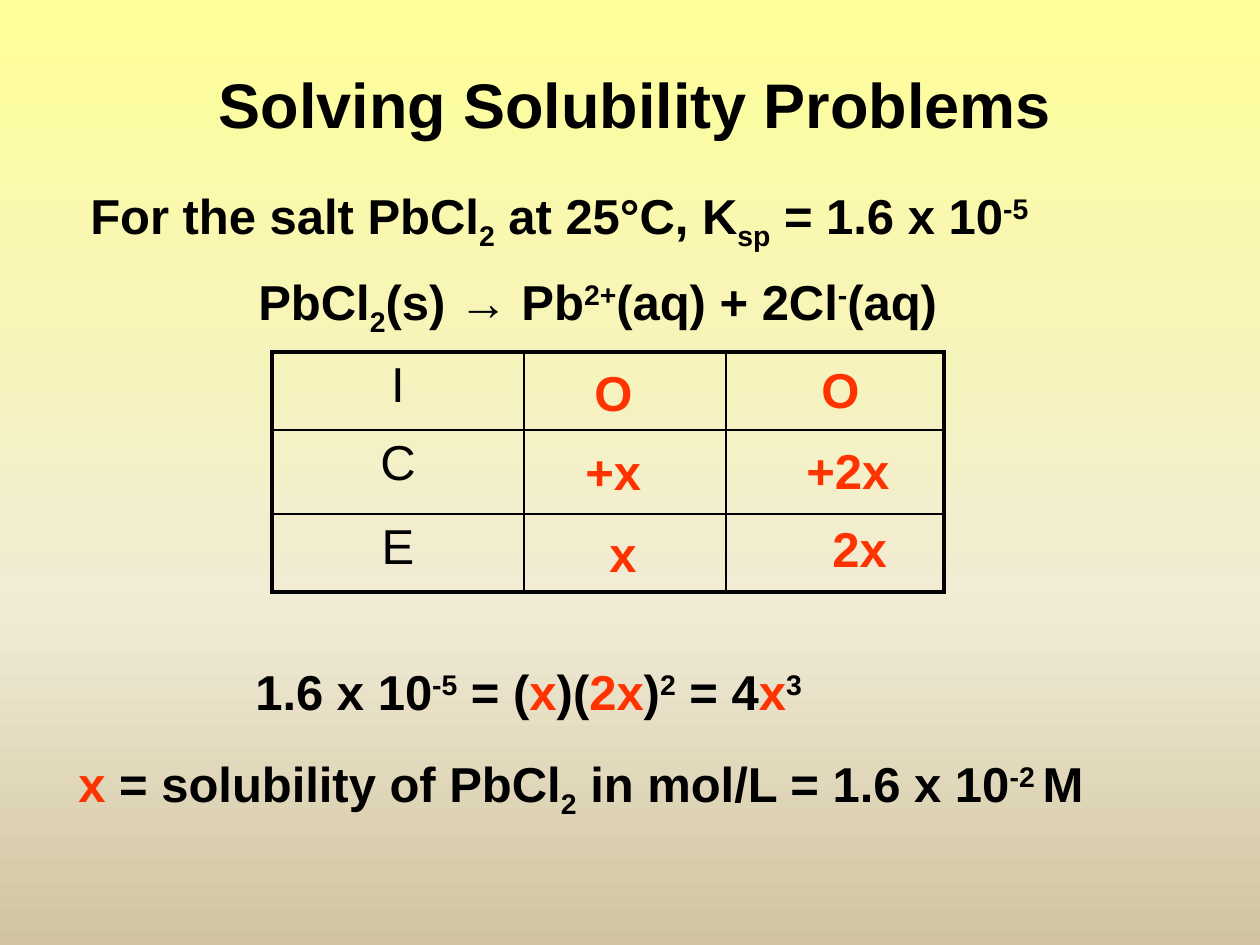
import copy

import lxml.etree
import pptx
import pptx.dml.color
import pptx.enum.text
import pptx.oxml.ns
import pptx.util

PX = 914400 / 126
BLACK, RED = "000000", "FF3300"
SUB, SUP = -25000, 30000
CENTER = pptx.enum.text.PP_ALIGN.CENTER


def rgb(value):
    return pptx.dml.color.RGBColor.from_string(value)


def write(tf, runs, size=28, bold=True, align=None):
    p = tf.paragraphs[0]
    p.alignment = align
    for text, color, base in runs:
        r = p.add_run()
        r.text = text
        font = {"name": "Arial", "size": pptx.util.Pt(size), "bold": bold}
        for key, value in font.items():
            setattr(r.font, key, value)
        r.font.color.rgb = rgb(color)
        if base:
            r.font._element.set("baseline", str(base))


prs = pptx.Presentation()
prs.slide_width, prs.slide_height = pptx.util.Inches(10), pptx.util.Inches(7.5)
s = prs.slides.add_slide(prs.slide_layouts[6])

fill = s.background.fill
fill.gradient()
fill.gradient_angle = 270
gs_list = s.element.xpath(".//a:gsLst")[0]
gs_list.append(copy.deepcopy(gs_list[-1]))
stops = [(0, "FFFF99"), (0.65, "F0EBD5"), (1, "D1C39F")]
for stop, (position, color) in zip(fill.gradient_stops, stops):
    stop.position = position
    stop.color.rgb = rgb(color)

sp = s.shapes.add_textbox(*[round(v * PX) for v in (63, 38, 1145, 130)])
tf = sp.text_frame
tf.word_wrap = True
tf.vertical_anchor = pptx.enum.text.MSO_ANCHOR.MIDDLE
write(tf, [("Solving Solubility Problems", BLACK, 0)], 36, True, CENTER)

widths, heights = [252, 202, 218], [78, 84, 78]
box = (272, 352, sum(widths), sum(heights))
table = s.shapes.add_table(3, 3, *[round(v * PX) for v in box]).table
table.first_row = table.horz_banding = False
for column, width in zip(table.columns, widths):
    column.width = round(width * PX)
for row, height in zip(table.rows, heights):
    row.height = round(height * PX)
for i, label in enumerate("ICE"):
    write(table.cell(i, 0).text_frame, [(label, BLACK, 0)], 28, False, CENTER)
    for j in range(3):
        cell = table.cell(i, j)
        tc_pr = cell._tc.get_or_add_tcPr()
        outer = {"lnL": j == 0, "lnR": j == 2, "lnT": i == 0, "lnB": i == 2}
        for side, is_outer in outer.items():
            ln = lxml.etree.SubElement(tc_pr, pptx.oxml.ns.qn("a:" + side))
            ln.set("w", str(pptx.util.Pt(2.25 if is_outer else 1)))
            solid = lxml.etree.SubElement(ln, pptx.oxml.ns.qn("a:solidFill"))
            lxml.etree.SubElement(solid, pptx.oxml.ns.qn("a:srgbClr")).set("val", BLACK)
        cell.fill.background()

lines = [
    (78, 179, 1135, True, [
        ("For the salt PbCl", BLACK, 0), ("2", BLACK, SUB), (" at 25°C, K", BLACK, 0),
        ("sp", BLACK, SUB), (" = 1.6 x 10", BLACK, 0), ("-5", BLACK, SUP)]),
    (246, 265, 733, False, [
        ("PbCl", BLACK, 0), ("2", BLACK, SUB), ("(s) → Pb", BLACK, 0),
        ("2+", BLACK, SUP), ("(aq) + 2Cl", BLACK, 0), ("-", BLACK, SUP),
        ("(aq)", BLACK, 0)]),
    (809, 353, 64, False, [("O", RED, 0)]),
    (582, 356, 64, False, [("O", RED, 0)]),
    (573, 435, 84, False, [("+x", RED, 0)]),
    (794, 434, 110, False, [("+2x", RED, 0)]),
    (597, 517, 54, False, [("x", RED, 0)]),
    (820, 512, 81, False, [("2x", RED, 0)]),
    (243, 655, 733, True, [
        ("1.6 x 10", BLACK, 0), ("-5", BLACK, SUP), (" = (", BLACK, 0), ("x", RED, 0),
        (")(", BLACK, 0), ("2x", RED, 0), (")", BLACK, 0), ("2", BLACK, SUP),
        (" = 4", BLACK, 0), ("x", RED, 0), ("3", BLACK, SUP)]),
    (66, 747, 1050, False, [
        ("x", RED, 0), (" = solubility of PbCl", BLACK, 0), ("2", BLACK, SUB),
        (" in mol/L = 1.6 x 10", BLACK, 0), ("-2 ", BLACK, SUP), ("M", BLACK, 0)]),
]
for x, y, width, wrap, runs in lines:
    sp = s.shapes.add_textbox(*[round(v * PX) for v in (x, y, width, 72)])
    tf = sp.text_frame
    tf.word_wrap = wrap
    tf.auto_size = pptx.enum.text.MSO_AUTO_SIZE.SHAPE_TO_FIT_TEXT
    write(tf, runs)

prs.save("out.pptx")
